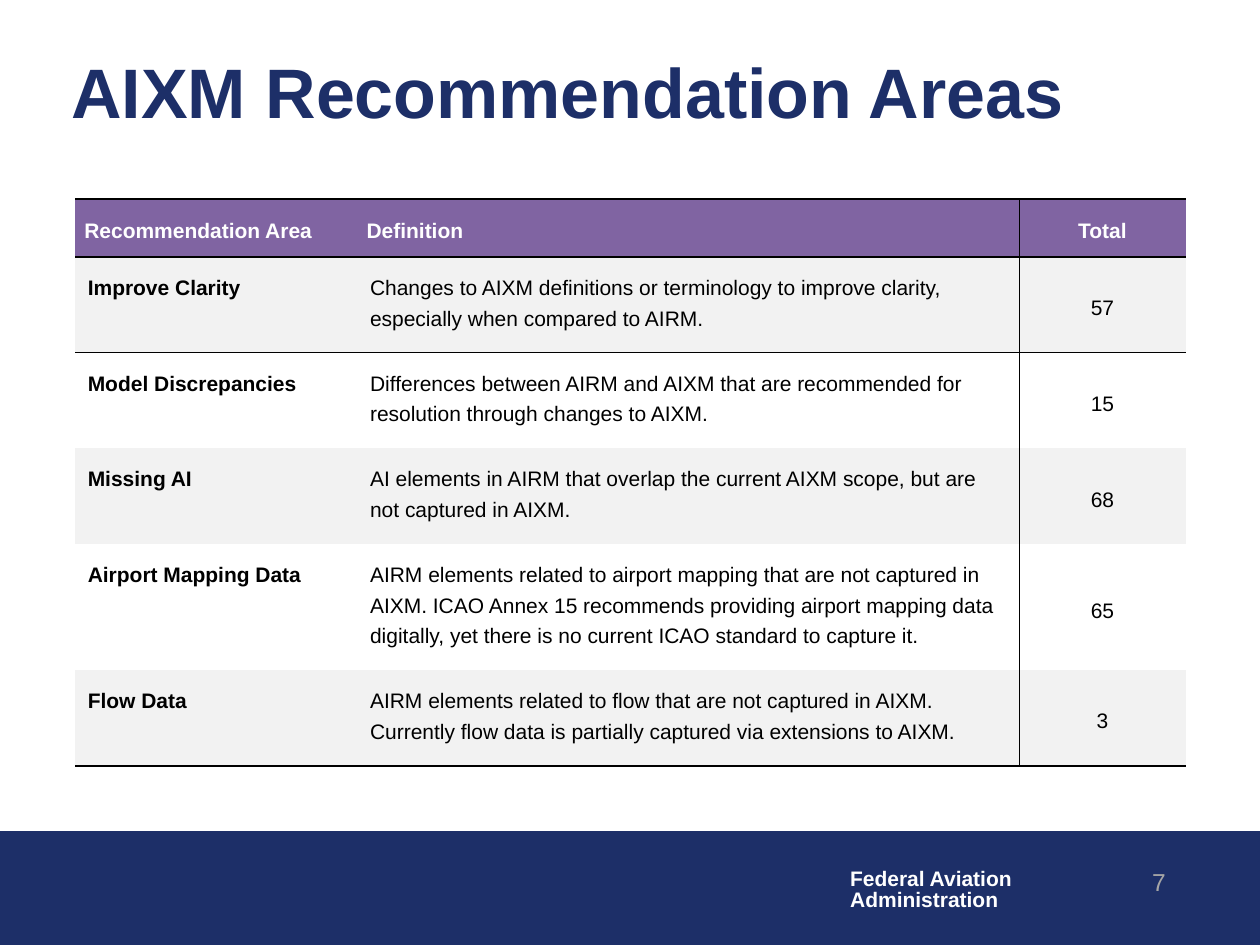
import pptx
import pptx.dml.color
import pptx.enum.shapes
import pptx.enum.text
import pptx.oxml
import pptx.oxml.ns
import pptx.util

Cm = pptx.util.Cm
Pt = pptx.util.Pt
ALIGN = pptx.enum.text.PP_ALIGN
ANCHOR = pptx.enum.text.MSO_ANCHOR

NAVY, PURPLE, PALE = "1D2F68", "8064A2", "F2F2F2"
BLACK, WHITE, GRAY = "000000", "FFFFFF", "A6A6A6"
NO_GRID_STYLE = "{2D5ABB26-0587-4C30-8999-92F81FD0307C}"

HEADER = ("Recommendation Area", "Definition", "Total")
AREAS = [
    ("Improve Clarity",
     "Changes to AIXM definitions or terminology to improve clarity, "
     "especially when compared to AIRM.", "57"),
    ("Model Discrepancies",
     "Differences between AIRM and AIXM that are recommended for "
     "resolution through changes to AIXM.", "15"),
    ("Missing AI",
     "AI elements in AIRM that overlap the current AIXM scope, but are "
     "not captured in AIXM.", "68"),
    ("Airport Mapping Data",
     "AIRM elements related to airport mapping that are not captured in "
     "AIXM. ICAO Annex 15 recommends providing airport mapping data "
     "digitally, yet there is no current ICAO standard to capture it.", "65"),
    ("Flow Data",
     "AIRM elements related to flow that are not captured in AIXM. "
     "Currently flow data is partially captured via extensions to AIXM.", "3"),
]
COLUMN_WIDTHS = (5.69, 13.34, 3.35)
ROW_HEIGHTS = (1.17, 1.93, 1.93, 1.93, 2.54, 1.93)


def rgb(value):
    return pptx.dml.color.RGBColor.from_string(value)


def write(paragraph, text, size, color, bold=False, align=ALIGN.LEFT, spacing=1.0):
    paragraph.alignment = align
    paragraph.line_spacing = spacing
    run = paragraph.add_run()
    run.text = text
    run.font.name = "Arial"
    run.font.size = Pt(size)
    run.font.bold = bold
    run.font.color.rgb = rgb(color)


def add_label(slide, box, lines, size, color, wrap=True, anchor=ANCHOR.TOP, **style):
    frame = slide.shapes.add_textbox(*map(Cm, box)).text_frame
    frame.word_wrap = wrap
    frame.vertical_anchor = anchor
    for index, line in enumerate(lines):
        paragraph = frame.add_paragraph() if index else frame.paragraphs[0]
        write(paragraph, line, size, color, **style)


def add_band(slide, box, color):
    band = slide.shapes.add_shape(pptx.enum.shapes.MSO_SHAPE.RECTANGLE, *map(Cm, box))
    band.shadow.inherit = False
    band.fill.solid()
    band.fill.fore_color.rgb = rgb(color)
    band.line.color.rgb = rgb(color)
    band.line.width = Pt(0.75)


def add_borders(cell, edges):
    properties = cell._tc.get_or_add_tcPr()
    for edge in edges:
        properties.append(pptx.oxml.parse_xml(
            f'<a:ln{edge} {pptx.oxml.ns.nsdecls("a")} w="{Pt(1)}">'
            f'<a:solidFill><a:srgbClr val="{BLACK}"/></a:solidFill></a:ln{edge}>'))


def cell_edges(row, column):
    """Rules around the header, under the last row and left of the totals."""
    edges = {0: "", 1: "R", 2: "L"}[column]
    if row <= 1:
        edges += "T"
    if row in (0, len(AREAS)):
        edges += "B"
    return edges


def fill_cell(cell, text, row, column):
    is_header, is_total = row == 0, column == 2
    # Borders come before the fill in the cell properties
    add_borders(cell, cell_edges(row, column))
    cell.fill.solid()
    cell.fill.fore_color.rgb = rgb(PURPLE if is_header else PALE if row % 2 else WHITE)
    cell.margin_left = cell.margin_right = Cm(0.18 if is_header else 0.25)
    cell.margin_top = cell.margin_bottom = Cm(0 if is_header else 0.25)
    cell.vertical_anchor = ANCHOR.MIDDLE if is_header or is_total else ANCHOR.TOP
    write(cell.text_frame.paragraphs[0], text, 12, WHITE if is_header else BLACK,
          bold=is_header or column == 0,
          align=ALIGN.CENTER if is_total else ALIGN.LEFT, spacing=1.3)


def add_areas_table(slide, left, top):
    rows = [HEADER] + AREAS
    table = slide.shapes.add_table(
        len(rows), len(HEADER), Cm(left), Cm(top),
        Cm(sum(COLUMN_WIDTHS)), Cm(sum(ROW_HEIGHTS))).table
    table.horz_banding = False
    table._tbl.tblPr.find(pptx.oxml.ns.qn("a:tableStyleId")).text = NO_GRID_STYLE
    for column, width in zip(table.columns, COLUMN_WIDTHS):
        column.width = Cm(width)
    for row, height in zip(table.rows, ROW_HEIGHTS):
        row.height = Cm(height)
    for r, texts in enumerate(rows):
        for c, text in enumerate(texts):
            fill_cell(table.cell(r, c), text, r, c)


def main():
    deck = pptx.Presentation()
    deck.slide_width, deck.slide_height = Cm(25.4), Cm(19.05)
    slide = deck.slides.add_slide(deck.slide_layouts[6])

    # Footer band with the agency name
    add_band(slide, (0, 16.76, 25.4, 2.27), NAVY)
    add_label(slide, (16.89, 17.4, 3.81, 1.12), ["Federal Aviation", "Administration"],
              12, WHITE, wrap=False, bold=True, spacing=0.85)

    # Title
    add_label(slide, (1.19, 0.97, 23.55, 1.7), ["AIXM Recommendation Areas"],
              40, NAVY, anchor=ANCHOR.MIDDLE, bold=True)

    # Recommendation areas
    add_areas_table(slide, 1.52, 4.01)

    # Page number
    add_label(slide, (20.7, 17.35, 3.05, 1.27), ["7"], 14, GRAY, align=ALIGN.RIGHT)

    deck.save("out.pptx")


if __name__ == "__main__":
    main()
